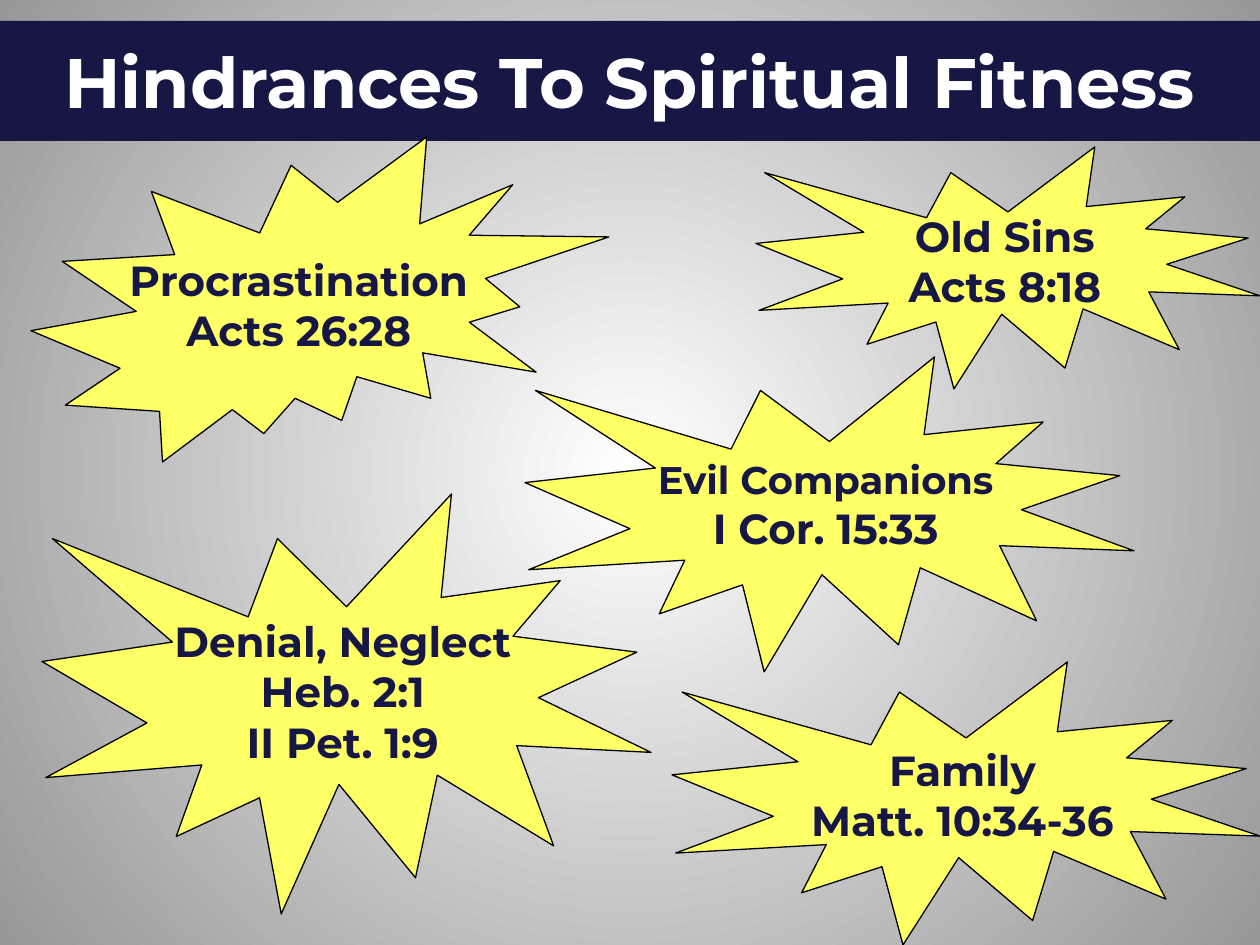
from dataclasses import dataclass

from pptx import Presentation
from pptx.dml.color import RGBColor
from pptx.enum.shapes import MSO_SHAPE as Kind
from pptx.enum.text import MSO_ANCHOR as Anchor, PP_ALIGN as Align
from pptx.oxml import parse_xml
from pptx.oxml.ns import nsdecls
from pptx.slide import Slide
from pptx.util import Emu, Pt

SCALE = 914400 / 126
NAVY, WHITE, YELLOW, BLACK, GREY = "171745", "FFFFFF", "FFFF66", "000000", "979797"
FONT = {"name": "Montserrat", "bold": True}


@dataclass(frozen=True)
class Line:
    text: str
    size: int = 24


@dataclass(frozen=True)
class Panel:
    kind: Kind
    box: tuple[int, int, int, int]
    lines: tuple[Line, ...]
    fill: str = YELLOW
    ink: str = NAVY
    edge: str | None = BLACK
    wrap: bool = False


PANELS = (
    Panel(Kind.RECTANGLE, (0, 21, 1260, 120),
          (Line("Hindrances To Spiritual Fitness", 40),),
          fill=NAVY, ink=WHITE, edge=None, wrap=True),
    Panel(Kind.EXPLOSION2, (31, 137, 578, 325),
          (Line("Procrastination"), Line("Acts 26:28"))),
    Panel(Kind.EXPLOSION1, (756, 147, 504, 242),
          (Line("Old Sins"), Line("Acts 8:18"))),
    Panel(Kind.EXPLOSION1, (42, 494, 609, 420),
          (Line("Denial, Neglect"), Line("Heb. 2:1"), Line("II Pet. 1:9"))),
    Panel(Kind.EXPLOSION1, (525, 357, 609, 315),
          (Line("Evil Companions", 22), Line("I Cor. 15:33"))),
    Panel(Kind.EXPLOSION1, (672, 662, 588, 283),
          (Line("Family"), Line("Matt. 10:34-36"))),
)


def px(count: int) -> Emu:
    return Emu(round(count * SCALE))


def color(code: str) -> RGBColor:
    return RGBColor.from_string(code)


def shade(slide: Slide) -> None:
    """Fill the background with a round gradient from the centre."""
    fill = slide.background.fill
    fill.gradient()
    for stop, code in zip(fill.gradient_stops, (WHITE, GREY)):
        stop.color.rgb = color(code)
    ring = parse_xml(
        f'<a:path {nsdecls("a")} path="circle">'
        '<a:fillToRect l="50000" t="50000" r="50000" b="50000"/></a:path>')
    grad = slide.element.xpath(".//p:bg//a:gradFill")[0]
    for lin in grad.xpath("a:lin"):
        grad.remove(lin)
    grad.xpath("a:gsLst")[0].addnext(ring)


def draw(slide: Slide, panel: Panel) -> None:
    shape = slide.shapes.add_shape(panel.kind, *map(px, panel.box))
    shape.shadow.inherit = False
    shape.fill.solid()
    shape.fill.fore_color.rgb = color(panel.fill)
    if panel.edge:
        shape.line.color.rgb = color(panel.edge)
        shape.line.width = Pt(0.75)
    else:
        shape.line.fill.background()

    frame = shape.text_frame
    frame.word_wrap = panel.wrap
    frame.vertical_anchor = Anchor.MIDDLE
    for i, line in enumerate(panel.lines):
        para = frame.add_paragraph() if i else frame.paragraphs[0]
        para.alignment = Align.CENTER
        run = para.add_run()
        run.text = line.text
        for key, value in (FONT | {"size": Pt(line.size)}).items():
            setattr(run.font, key, value)
        run.font.color.rgb = color(panel.ink)


def main() -> None:
    deck = Presentation()
    deck.slide_width, deck.slide_height = px(1260), px(945)
    slide = deck.slides.add_slide(deck.slide_layouts[6])
    shade(slide)
    for panel in PANELS:
        draw(slide, panel)
    deck.save("out.pptx")


if __name__ == "__main__":
    main()
